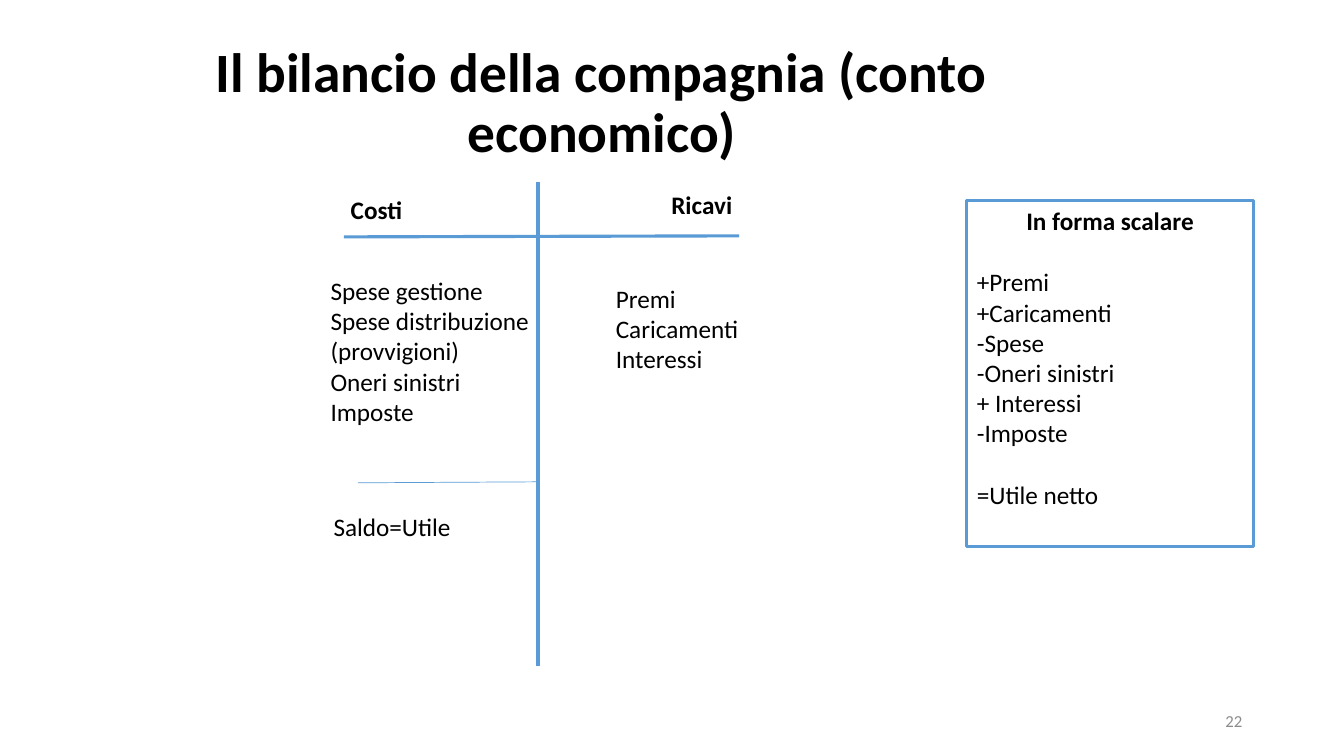
from lxml import etree
from pptx import Presentation
from pptx.dml.color import RGBColor
from pptx.enum.shapes import MSO_CONNECTOR, MSO_SHAPE
from pptx.enum.text import MSO_ANCHOR, PP_ALIGN
from pptx.oxml.ns import qn
from pptx.util import Inches, Pt

LEFT, CENTER, RIGHT = PP_ALIGN.LEFT, PP_ALIGN.CENTER, PP_ALIGN.RIGHT
TOP, MIDDLE = MSO_ANCHOR.TOP, MSO_ANCHOR.MIDDLE
STRAIGHT, RECTANGLE = MSO_CONNECTOR.STRAIGHT, MSO_SHAPE.RECTANGLE


def color(value):
    return RGBColor.from_string(value)


class StatementSlide:
    font = "Calibri"
    ink = "000000"
    accent = "5B9BD5"
    muted = "8C8C8C"
    body = 18
    line_gap = 22

    def __init__(self, presentation):
        self.slide = presentation.slides.add_slide(presentation.slide_layouts[6])

    def fill_text(self, frame, lines, size=body, bold=False, ink=ink, align=LEFT, anchor=TOP):
        frame.word_wrap = True
        frame.vertical_anchor = anchor
        for index, line in enumerate(lines):
            paragraph = frame.paragraphs[0] if index == 0 else frame.add_paragraph()
            paragraph.alignment = align
            run = paragraph.add_run()
            run.text = line
            run.font.name = self.font
            run.font.size = Pt(size)
            run.font.bold = bold
            run.font.color.rgb = color(ink)
        return frame

    def text(self, box, lines, **style):
        area = self.slide.shapes.add_textbox(*map(Inches, box))
        return self.fill_text(area.text_frame, lines, **style)

    def rule(self, start, end, width):
        rule = self.slide.shapes.add_connector(STRAIGHT, *map(Inches, start + end))
        rule.line.color.rgb = color(self.accent)
        rule.line.width = Pt(width)
        etree.SubElement(rule._element.spPr, qn("a:effectLst"))

    def panel(self, box, heading, lines, gaps_before):
        panel = self.slide.shapes.add_shape(RECTANGLE, *map(Inches, box))
        panel.shadow.inherit = False
        panel.fill.background()
        panel.line.color.rgb = color(self.accent)
        panel.line.width = Pt(2.25)
        frame = self.fill_text(panel.text_frame, [heading] + lines)
        first = frame.paragraphs[0]
        first.alignment = CENTER
        first.runs[0].font.bold = True
        for paragraph in frame.paragraphs:
            if paragraph.text in gaps_before:
                paragraph.space_before = Pt(self.line_gap)


def main():
    presentation = Presentation()
    presentation.slide_width = Inches(13.33)
    presentation.slide_height = Inches(7.5)
    statement = StatementSlide(presentation)

    # Title and page number
    title = statement.text((0.72, 0.4, 10.49, 1.27),
                           ["Il bilancio della compagnia (conto economico)"],
                           size=39.6, bold=True, align=CENTER, anchor=MIDDLE)
    title.paragraphs[0].line_spacing = 0.9
    statement.text((9.42, 6.95, 3, 0.4), ["22"], size=12, ink=statement.muted,
                   align=RIGHT, anchor=MIDDLE)

    # T-account lines
    statement.rule((5.34, 1.81), (5.34, 6.61), 3)
    statement.rule((3.41, 2.35), (7.33, 2.34), 2.25)
    statement.rule((3.55, 4.79), (5.35, 4.78), 0.5)

    # Revenues
    statement.text((6.56, 1.83, 1.68, 0.4), ["Ricavi"], bold=True)
    statement.text((6.01, 2.76, 1.67, 1.01), ["Premi", "Caricamenti", "Interessi"])

    # Costs and balance
    statement.text((3.38, 1.88, 1.64, 0.4), ["Costi"], bold=True)
    statement.text((3.18, 2.68, 2.38, 1.92),
                   ["Spese gestione", "Spese distribuzione (provvigioni)",
                    "Oneri sinistri", "Imposte"])
    statement.text((3.21, 5.02, 2.03, 0.4), ["Saldo=Utile"])

    # Step-by-step form
    statement.panel((9.59, 1.99, 2.84, 3.43), "In forma scalare",
                    ["+Premi", "+Caricamenti", "-Spese", "-Oneri sinistri",
                     "+ Interessi", "-Imposte", "=Utile netto"],
                    gaps_before=("+Premi", "=Utile netto"))

    presentation.save("out.pptx")


if __name__ == "__main__":
    main()
